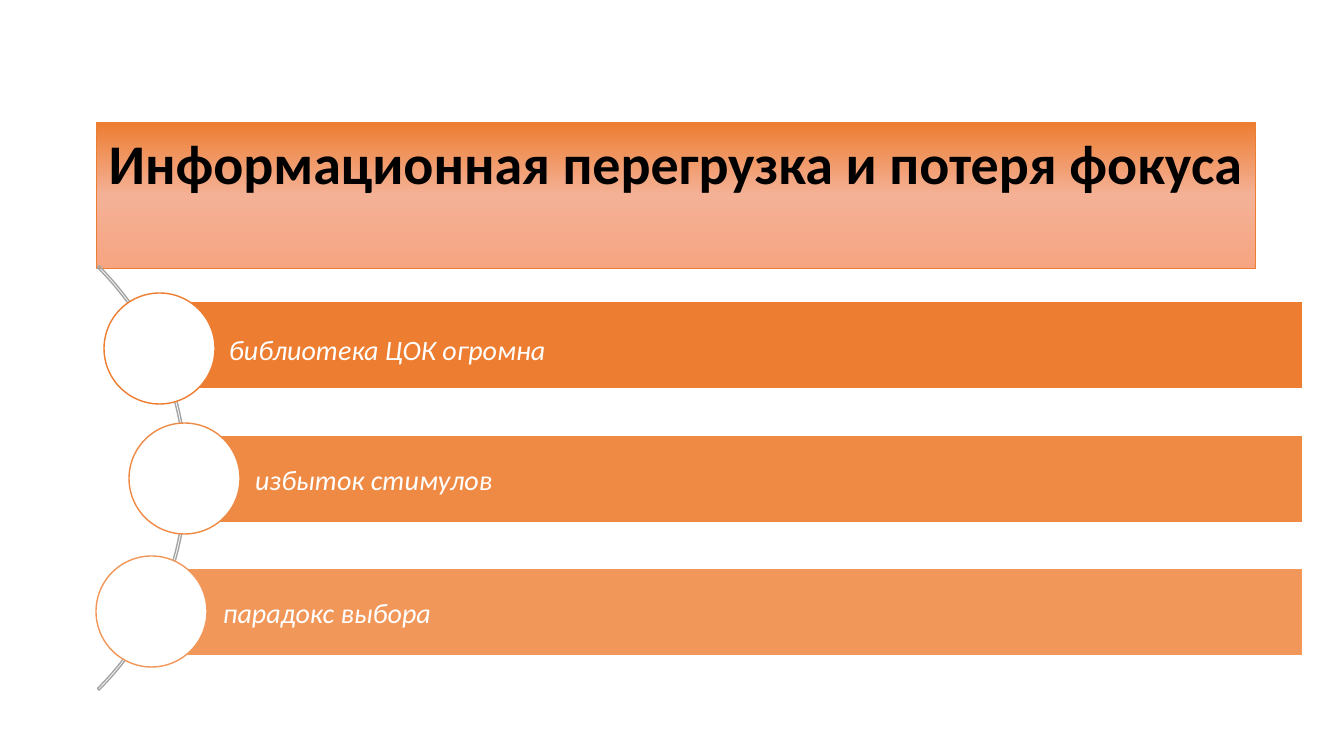
from copy import deepcopy
from dataclasses import dataclass

from pptx import Presentation
from pptx.dml.color import RGBColor
from pptx.enum.shapes import MSO_SHAPE
from pptx.enum.text import MSO_ANCHOR, PP_ALIGN
from pptx.oxml.ns import qn
from pptx.shapes.autoshape import Shape
from pptx.slide import Slide
from pptx.util import Emu, Pt

PX_PER_INCH = 100.8


def px(n: int) -> Emu:
    return Emu(round(n * 914400 / PX_PER_INCH))


@dataclass(frozen=True)
class Theme:
    font: str = "Calibri"
    title_size: int = 40
    item_size: int = 20
    black: str = "000000"
    white: str = "FFFFFF"
    orange: str = "ED7D31"
    arc: str = "A5A5A5"
    gradient: tuple[str, ...] = ("ED7D31", "F4B196", "F7A582")


@dataclass(frozen=True)
class Item:
    text: str
    color: str
    bar_left: int
    bar_top: int
    circle_left: int
    circle_top: int
    indent: int = 71
    inset_top: int = 6


THEME = Theme()
BAR_RIGHT, BAR_HEIGHT, CIRCLE = 1303, 88, 111
ITEMS = (
    Item("библиотека ЦОК огромна", THEME.orange, 152, 301, 104, 293, 77, 14),
    Item("избыток стимулов", "EF8A45", 184, 435, 129, 423),
    Item("парадокс выбора", "F19759", 152, 568, 96, 556),
)


def add_shape(s: Slide, kind: MSO_SHAPE, left: int, top: int, width: int, height: int,
              fill: str | None, line: str, weight: float = 1) -> Shape:
    sp = s.shapes.add_shape(kind, px(left), px(top), px(width), px(height))
    sp.shadow.inherit = False
    if fill:
        sp.fill.solid()
        sp.fill.fore_color.rgb = RGBColor.from_string(fill)
    else:
        sp.fill.background()
    sp.line.color.rgb = RGBColor.from_string(line)
    sp.line.width = Pt(weight)
    return sp


def set_gradient(sp: Shape, colors: tuple[str, ...]) -> None:
    """Fill from top to bottom with evenly spaced colours."""
    sp.fill.gradient()
    sp.fill.gradient_angle = 270
    stops = sp._element.spPr.find(qn("a:gradFill")).find(qn("a:gsLst"))
    while len(stops) < len(colors):
        stops.append(deepcopy(stops[0]))
    for i, (stop, color) in enumerate(zip(sp.fill.gradient_stops, colors)):
        stop.position = i / (len(colors) - 1)
        stop.color.rgb = RGBColor.from_string(color)


def set_text(sp: Shape, text: str, size: int, color: str, align: PP_ALIGN,
             anchor: MSO_ANCHOR, left: int, top: int, bold: bool = False,
             italic: bool = False) -> None:
    tf = sp.text_frame
    tf.text = text
    tf.word_wrap = True
    tf.vertical_anchor = anchor
    tf.margin_left, tf.margin_top = px(left), px(top)
    tf.margin_right = tf.margin_bottom = px(6)
    p = tf.paragraphs[0]
    p.alignment = align
    p.line_spacing = 0.9 if bold else 1.0
    font = p.runs[0].font
    font.name, font.size = THEME.font, Pt(size)
    font.bold, font.italic = bold, italic
    font.color.rgb = RGBColor.from_string(color)


def add_title(s: Slide) -> None:
    sp = add_shape(s, MSO_SHAPE.RECTANGLE, 96, 122, 1159, 146, None, THEME.orange, 0.5)
    set_gradient(sp, THEME.gradient)
    set_text(sp, "Информационная перегрузка и потеря фокуса", THEME.title_size,
             THEME.black, PP_ALIGN.CENTER, MSO_ANCHOR.TOP, 6, 14, bold=True)


def add_arc(s: Slide) -> None:
    sp = add_shape(s, MSO_SHAPE.BLOCK_ARC, -413, 178, 600, 600, None, THEME.arc)
    for i, value in enumerate((189, 27, 0.004)):
        sp.adjustments[i] = value


def add_item(s: Slide, item: Item) -> None:
    bar = add_shape(s, MSO_SHAPE.RECTANGLE, item.bar_left, item.bar_top,
                    BAR_RIGHT - item.bar_left, BAR_HEIGHT, item.color, THEME.white)
    set_text(bar, item.text, THEME.item_size, THEME.white, PP_ALIGN.LEFT,
             MSO_ANCHOR.MIDDLE, item.indent, item.inset_top, italic=True)
    add_shape(s, MSO_SHAPE.OVAL, item.circle_left, item.circle_top, CIRCLE, CIRCLE,
              THEME.white, item.color)


def main() -> None:
    prs = Presentation()
    prs.slide_width, prs.slide_height = px(1344), px(756)
    s = prs.slides.add_slide(prs.slide_layouts[6])
    add_title(s)
    add_arc(s)
    for item in ITEMS:
        add_item(s, item)
    prs.save("out.pptx")


if __name__ == "__main__":
    main()
